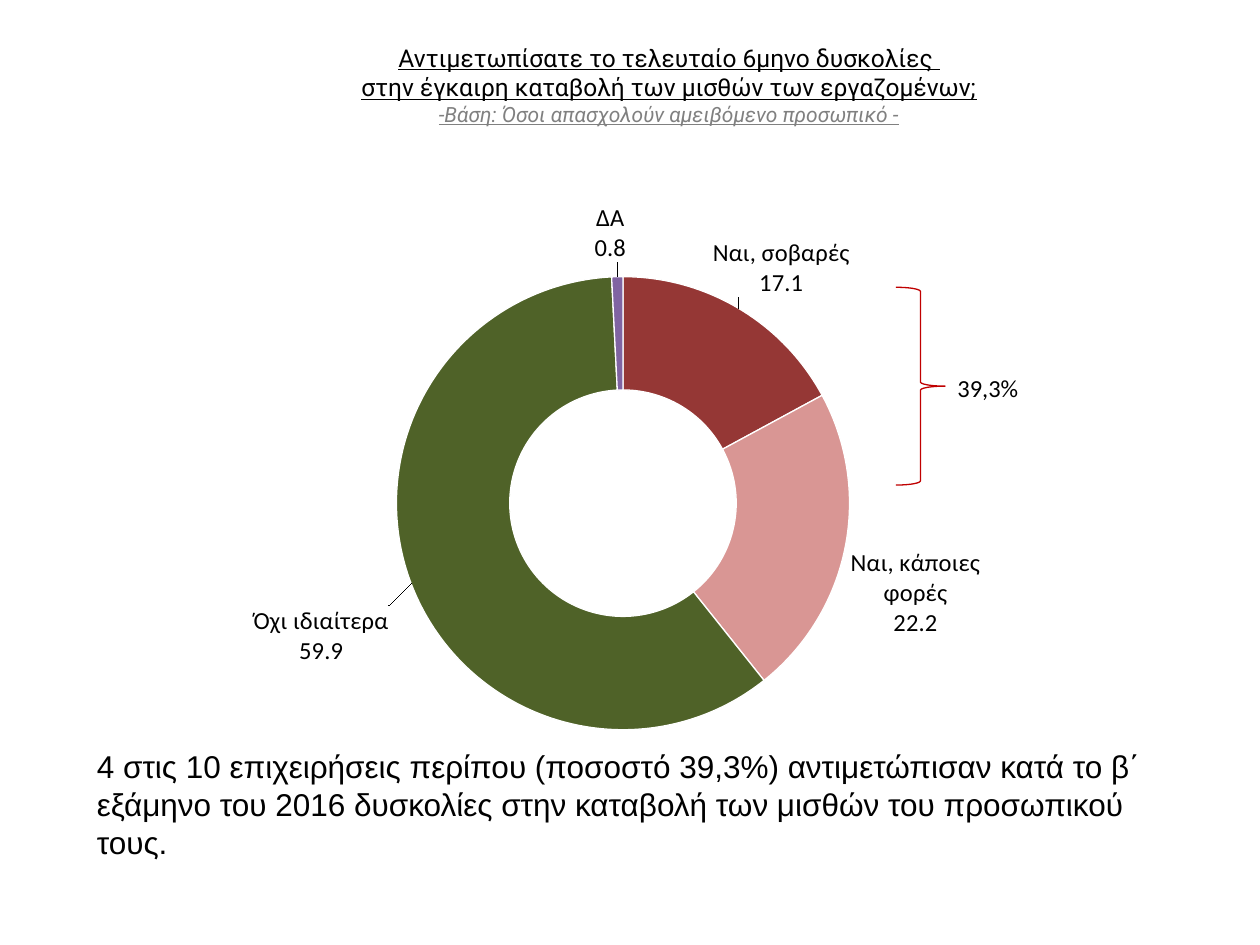
from lxml import etree
from pptx import Presentation
from pptx.chart.data import CategoryChartData
from pptx.dml.color import RGBColor
from pptx.enum.chart import XL_CHART_TYPE as ChartType
from pptx.enum.shapes import MSO_SHAPE as Shape
from pptx.enum.text import MSO_ANCHOR as Anchor, MSO_AUTO_SIZE as AutoSize, PP_ALIGN as Align
from pptx.oxml import parse_xml
from pptx.oxml.ns import nsdecls, qn
from pptx.util import Inches, Pt

WIDTH, HEIGHT = 10, 7.5
TITLE = [
    ("Αντιμετωπίσατε το τελευταίο 6μηνο δυσκολίες ", 14, "000000", False),
    ("στην έγκαιρη καταβολή των μισθών των εργαζομένων;", 14, "000000", False),
    ("-Βάση: Όσοι απασχολούν αμειβόμενο προσωπικό -", 12, "808080", True),
]
ANSWERS = [
    ("Ναι, σοβαρές", 17.1, "953735", (0.085, -0.16)),
    ("Ναι, κάποιες φορές", 22.2, "D99694", (0.15, 0.1)),
    ("Όχι ιδιαίτερα", 59.9, "4F6228", (-0.17, 0.13)),
    ("ΔΑ", 0.8, "8064A2", (-0.01, -0.18)),
]
FINDING = (
    "4 στις 10 επιχειρήσεις περίπου (ποσοστό 39,3%) αντιμετώπισαν κατά το β΄ "
    "εξάμηνο του 2016 δυσκολίες στην καταβολή των μισθών του προσωπικού τους."
)


def color(value):
    """Turn a hex string into a colour."""
    return RGBColor.from_string(value)


def area(left, top, width, height):
    """Turn percentages of the slide's size into a box."""
    return (Inches(left * WIDTH / 100), Inches(top * HEIGHT / 100),
            Inches(width * WIDTH / 100), Inches(height * HEIGHT / 100))


def style(font, name, size, value="000000"):
    """Set the face, size and colour of a font."""
    font.name, font.size = name, Pt(size)
    font.color.rgb = color(value)


def layout_xml(**settings):
    """Make a manual chart layout."""
    layout = parse_xml(f"<c:layout {nsdecls('c')}><c:manualLayout/></c:layout>")
    for name, value in settings.items():
        etree.SubElement(layout[0], qn(f"c:{name}")).set("val", str(value))
    return layout


def fill_title(title, box):
    """Place the question and its base in the title placeholder."""
    title.left, title.top, title.width, title.height = box
    frame = title.text_frame
    frame.auto_size, frame.vertical_anchor = AutoSize.NONE, Anchor.TOP
    frame.text = "\v".join(line for line, *_ in TITLE)
    para = frame.paragraphs[0]
    para.alignment = Align.CENTER
    for span, (_, size, value, italic) in zip(para.runs, TITLE):
        style(span.font, "Roboto", size, value)
        span.font.underline, span.font.italic = True, italic


def place_label(label, offset):
    """Show category and value, moved by shares of the chart's size."""
    label.insert(1, layout_xml(x=offset[0], y=offset[1]))
    number = parse_xml(f'<c:numFmt {nsdecls("c")} formatCode="0.0" sourceLinked="0"/>')
    label.insert(2, number)
    label.find(qn("c:showCatName")).set("val", "1")
    etree.SubElement(label, qn("c:separator")).text = "\n"


def add_doughnut(page, box):
    """Draw the answers as a doughnut with outside labels."""
    data = CategoryChartData(number_format="0.0")
    data.categories = [name for name, *_ in ANSWERS]
    data.add_series("Series 1", [value for _, value, *_ in ANSWERS])
    chart = page.shapes.add_chart(ChartType.DOUGHNUT, *box, data).chart
    chart.has_title = chart.has_legend = False
    style(chart.font, "Vollkorn", 18)
    plot = chart.plots[0]
    plot.vary_by_categories = True
    series = plot.series[0]
    for index, (_, _, value, _) in enumerate(ANSWERS):
        point = series.points[index]
        point.format.fill.solid()
        point.format.fill.fore_color.rgb = color(value)
        point.format.line.color.rgb = color("FFFFFF")
        point.format.line.width = Pt(0.75)
        style(point.data_label.font, "Calibri", 14)
    labels = series.data_labels
    labels.show_value = labels.show_category_name = True
    for label, answer in zip(series._element.iter(qn("c:dLbl")), ANSWERS):
        place_label(label, answer[3])
    plot_area = next(chart._chartSpace.iter(qn("c:plotArea")))
    for old in plot_area.findall(qn("c:layout")):
        plot_area.remove(old)
    plot_area.insert(0, layout_xml(layoutTarget="inner", xMode="edge", yMode="edge",
                                   x=0.23, y=0.15, w=0.54, h=0.81))


def add_brace(page, box):
    """Bracket the two positive answers."""
    brace = page.shapes.add_shape(Shape.RIGHT_BRACE, *box)
    brace.shadow.inherit = False
    brace.fill.background()
    brace.line.color.rgb = color("C00000")
    brace.line.width = Pt(0.75)


def add_text(page, box, text, font_name, size):
    """Add a wrapped text box."""
    frame = page.shapes.add_textbox(*box).text_frame
    frame.word_wrap = True
    frame.text = text
    style(frame.paragraphs[0].runs[0].font, font_name, size)


def build_survey_page(deck):
    """Build the page on wage payment difficulties."""
    page = deck.slides.add_slide(deck.slide_layouts[0])
    subtitle = page.placeholders[1]._element
    subtitle.getparent().remove(subtitle)
    add_doughnut(page, area(16.1, 20.4, 66.7, 59.2))
    fill_title(page.shapes.title, area(12.5, 3.87, 81.2, 4.67))
    add_brace(page, area(71.1, 30.4, 3.9, 20.93))
    add_text(page, area(75, 38.8, 8.7, 4.53), "39,3%", "Calibri", 14)
    add_text(page, area(6.7, 78.4, 88.2, 13.47), FINDING, "Arial", 18)


def main():
    """Create and save the deck."""
    deck = Presentation()
    deck.slide_width, deck.slide_height = Inches(WIDTH), Inches(HEIGHT)
    build_survey_page(deck)
    deck.save("out.pptx")


if __name__ == "__main__":
    main()
